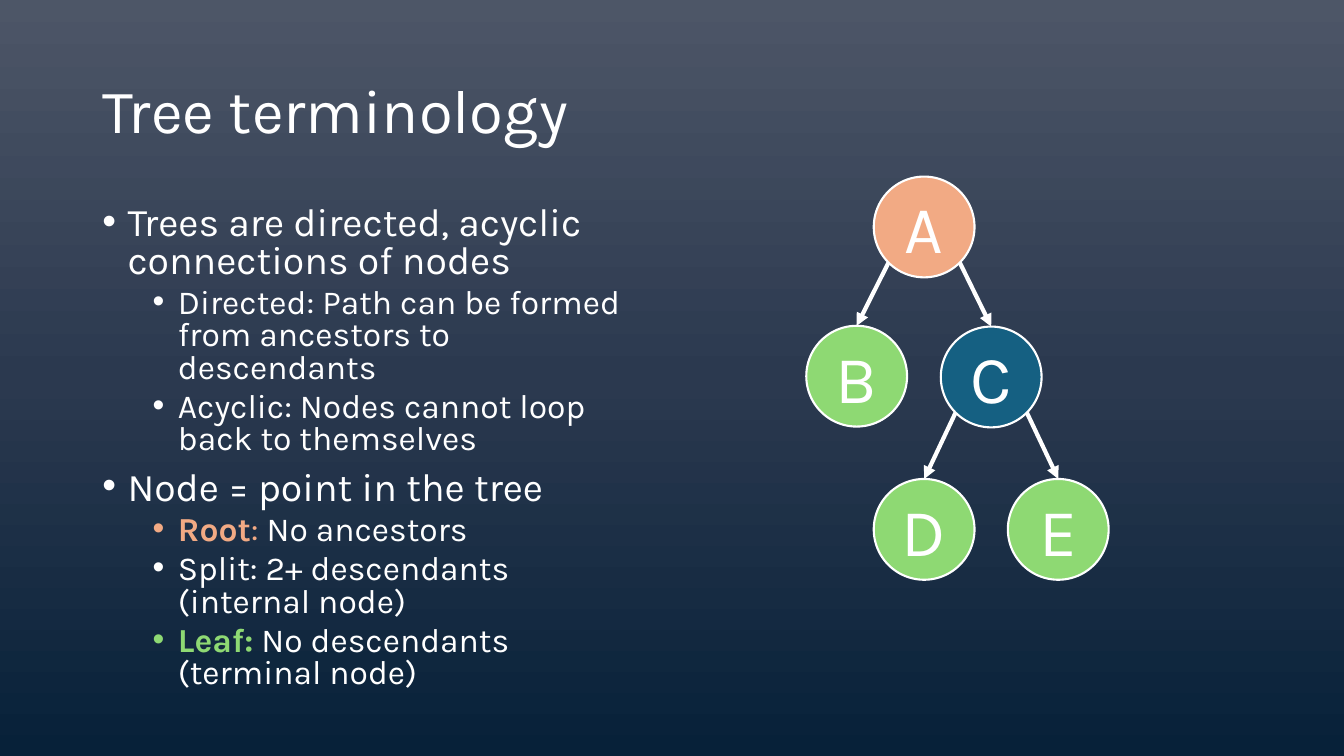
from copy import deepcopy

from lxml import etree
from pptx import Presentation
from pptx import util as u
from pptx.dml.color import RGBColor
from pptx.enum import shapes, text
from pptx.oxml.ns import qn

FONT = "Karla"
WHITE, ORANGE, GREEN, BLUE = "FFFFFF", "F2AA84", "8ED973", "156082"
NODE_SIZE = 2.54
CORNER = NODE_SIZE / 2 * (1 - 0.5 ** 0.5)

POINTS = [
    (0, [("Trees are directed, acyclic connections of nodes", WHITE, False)]),
    (1, [("Directed: Path can be formed from ancestors to descendants", WHITE, False)]),
    (1, [("Acyclic: Nodes cannot loop back to themselves", WHITE, False)]),
    (0, [("Node = point in the tree", WHITE, False)]),
    (1, [("Root", ORANGE, True), (":", ORANGE, False), (" No ancestors", WHITE, False)]),
    (1, [("Split: 2+ descendants (internal node)", WHITE, False)]),
    (1, [("Leaf:", GREEN, True), (" No descendants (terminal node)", WHITE, False)]),
]
NODES = {
    "A": (22.02, 4.45, ORANGE),
    "B": (20.32, 8.21, GREEN),
    "C": (23.71, 8.23, BLUE),
    "D": (22.02, 12.07, GREEN),
    "E": (25.4, 12.07, GREEN),
}
BRANCHES = ["AB", "AC", "CD", "CE"]


def paint(color, value):
    """Give a colour object the RGB value of a hex string."""
    color.rgb = RGBColor.from_string(value)


def style(paragraph, size):
    """Set the font, size and white colour of a paragraph."""
    paragraph.font.name = FONT
    paragraph.font.size = u.Pt(size)
    paint(paragraph.font.color, WHITE)


def set_background(page, colors):
    """Fill the page from top to bottom with evenly spaced gradient colours."""
    fill = page.background.fill
    fill.gradient()
    fill.gradient_angle = 270
    first = fill.gradient_stops[0]._gs
    for _ in colors[2:]:
        first.addnext(deepcopy(first))
    for index, (stop, value) in enumerate(zip(fill.gradient_stops, colors)):
        stop.position = index / (len(colors) - 1)
        paint(stop.color, value)


def set_title(page, words):
    """Move and format the title placeholder."""
    title = page.shapes.title
    title.left, title.top = u.Cm(2.33), u.Cm(1.01)
    title.width, title.height = u.Cm(29.21), u.Cm(3.68)
    title.text_frame.vertical_anchor = text.MSO_ANCHOR.MIDDLE
    paragraph = title.text_frame.paragraphs[0]
    paragraph.text = words
    paragraph.alignment = text.PP_ALIGN.LEFT
    paragraph.line_spacing = 0.9
    style(paragraph, 44)


def add_bullet(paragraph, level):
    """Give a paragraph a round bullet and the hanging indent of its level."""
    properties = paragraph._p.get_or_add_pPr()
    properties.set("marL", str(u.Cm(0.635 + 1.27 * level)))
    properties.set("indent", str(u.Cm(-0.635)))
    etree.SubElement(properties, qn("a:buFont")).set("typeface", "Arial")
    etree.SubElement(properties, qn("a:buChar")).set("char", "•")


def add_points(page):
    """Write the bulleted definitions."""
    box = page.shapes.add_textbox(u.Cm(2.33), u.Cm(5.08), u.Cm(13.97), u.Cm(12.09))
    frame = box.text_frame
    frame.word_wrap = True
    for index, (level, pieces) in enumerate(POINTS):
        paragraph = frame.add_paragraph() if index else frame.paragraphs[0]
        paragraph.level = level
        paragraph.line_spacing = 0.8
        paragraph.space_before = u.Pt(5 if level else 10)
        add_bullet(paragraph, level)
        style(paragraph, 24 if level else 28)
        for words, color, bold in pieces:
            span = paragraph.add_run()
            span.text = words
            span.font.bold = bold
            paint(span.font.color, color)


def add_node(page, letter, left, top, color):
    """Draw a lettered tree node and return it."""
    node = page.shapes.add_shape(
        shapes.MSO_SHAPE.OVAL, u.Cm(left), u.Cm(top), u.Cm(NODE_SIZE), u.Cm(NODE_SIZE))
    node.shadow.inherit = False
    node.fill.solid()
    paint(node.fill.fore_color, color)
    paint(node.line.color, WHITE)
    node.line.width = u.Pt(1.5)
    node.text_frame.vertical_anchor = text.MSO_ANCHOR.MIDDLE
    paragraph = node.text_frame.paragraphs[0]
    paragraph.text = letter
    paragraph.alignment = text.PP_ALIGN.CENTER
    style(paragraph, 48)
    return node


def add_branch(page, parent, child):
    """Draw an arrow from a lower corner of the parent to the top of the child."""
    inset = u.Cm(CORNER)
    goes_left = child.left < parent.left
    start_x = parent.left + (inset if goes_left else parent.width - inset)
    start_y = parent.top + parent.height - inset
    branch = page.shapes.add_connector(
        shapes.MSO_CONNECTOR.STRAIGHT, start_x, start_y, start_x, start_y)
    branch.end_connect(child, 0)
    paint(branch.line.color, WHITE)
    branch.line.width = u.Pt(3)
    etree.SubElement(branch.line._get_or_add_ln(), qn("a:tailEnd")).set("type", "triangle")
    etree.SubElement(branch._element.spPr, qn("a:effectLst"))


def main():
    """Build and save the slide on tree terminology."""
    deck = Presentation()
    deck.slide_width, deck.slide_height = u.Cm(33.87), u.Cm(19.05)
    page = deck.slides.add_slide(deck.slide_layouts[5])
    set_background(page, ["4D5667", "2B394F", "072139"])
    set_title(page, "Tree terminology")
    add_points(page)
    nodes = {letter: add_node(page, letter, *place) for letter, place in NODES.items()}
    for parent, child in BRANCHES:
        add_branch(page, nodes[parent], nodes[child])
    deck.save("out.pptx")


if __name__ == "__main__":
    main()
